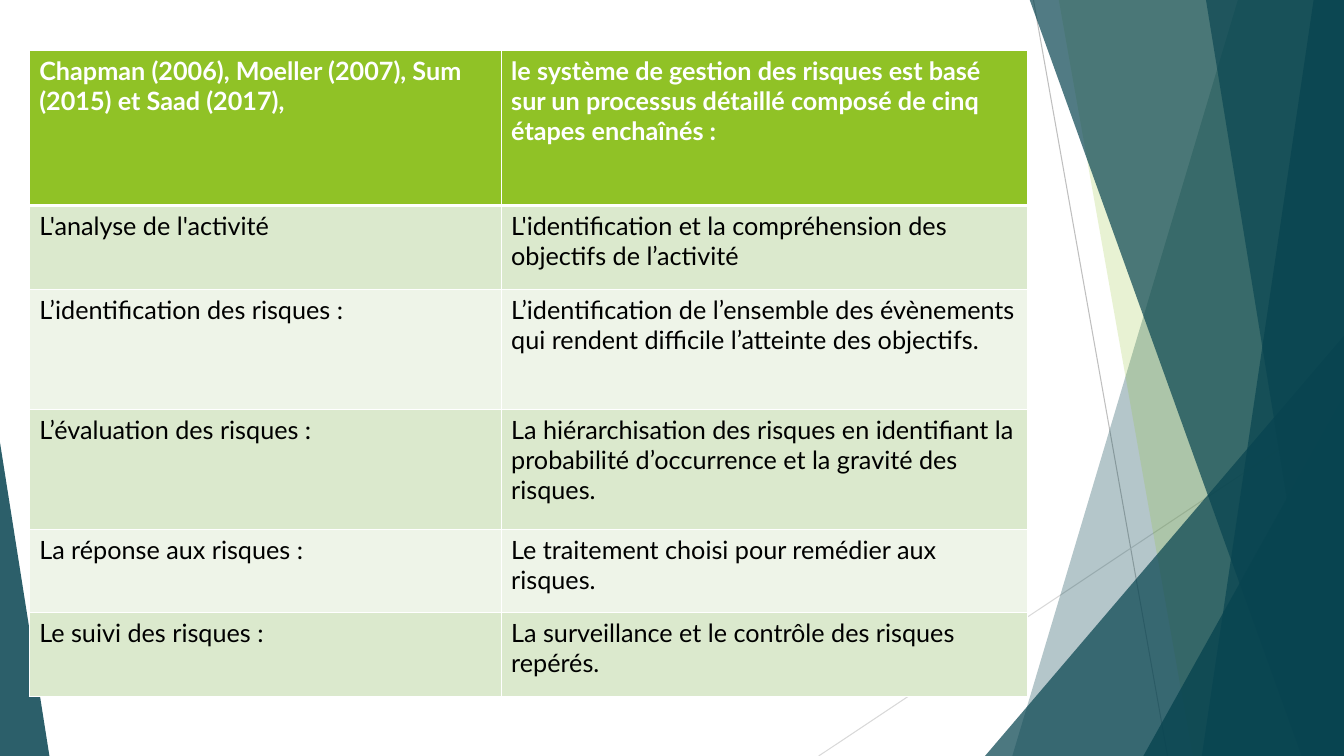
import pptx
import pptx.dml.color
import pptx.enum.shapes
import pptx.oxml
import pptx.oxml.ns
import pptx.util
from pptx.util import Inches

COLORS = {
    "white": "FFFFFF",
    "black": "000000",
    "teal": "084450",
    "green": "90C226",
    "light": "DBE9CD",
    "pale": "EEF4E8",
    "grey": "BFBFBF",
    "silver": "D9D9D9",
}
WIDTH, HEIGHT = 13.33, 7.5

ROWS = [
    ("Chapman (2006), Moeller (2007), Sum (2015) et Saad (2017),",
     "le système de gestion des risques est basé sur un processus détaillé composé de cinq étapes enchaînés :"),
    ("L'analyse de l'activité",
     "L'identification et la compréhension des objectifs de l’activité"),
    ("L’identification des risques :",
     "L’identification de l’ensemble des évènements qui rendent difficile l’atteinte des objectifs."),
    ("L’évaluation des risques :",
     "La hiérarchisation des risques en identifiant la probabilité d’occurrence et la gravité des risques."),
    ("La réponse aux risques :",
     "Le traitement choisi pour remédier aux risques."),
    ("Le suivi des risques :",
     "La surveillance et le contrôle des risques repérés."),
]
COL_WIDTHS = [4.68, 5.22]
ROW_HEIGHTS = [1.54, 0.83, 1.19, 1.19, 0.83, 0.83]


def rgb(name):
    return pptx.dml.color.RGBColor.from_string(COLORS[name])


def write(tf, text, font="Lato", size=18, color="black", bold=False):
    r = tf.paragraphs[0].add_run()
    r.text = text
    r.font.name = font
    r.font.size = pptx.util.Pt(size)
    r.font.bold = bold
    r.font.color.rgb = rgb(color)


class Deck:
    def __init__(self):
        self.prs = pptx.Presentation()
        self.prs.slide_width = Inches(WIDTH)
        self.prs.slide_height = Inches(HEIGHT)
        self.s = self.prs.slides.add_slide(self.prs.slide_layouts[6])

    def line(self, x1, y1, x2, y2, color):
        sp = self.s.shapes.add_connector(
            pptx.enum.shapes.MSO_CONNECTOR.STRAIGHT,
            Inches(x1), Inches(y1), Inches(x2), Inches(y2))
        sp.line.color.rgb = rgb(color)
        sp.line.width = pptx.util.Pt(0.75)
        pptx.oxml.ns.qn("a:effectLst")
        sp._element.spPr.append(pptx.oxml.parse_xml(
            f'<a:effectLst {pptx.oxml.ns.nsdecls("a")}/>'))

    def paint(self, sp, color, opacity):
        sp.shadow.inherit = False
        sp.fill.solid()
        sp.fill.fore_color.rgb = rgb(color)
        clr = sp._element.spPr.find(".//" + pptx.oxml.ns.qn("a:srgbClr"))
        clr.append(pptx.oxml.parse_xml(
            f'<a:alpha {pptx.oxml.ns.nsdecls("a")} val="{opacity * 1000}"/>'))
        sp.line.fill.background()

    def band(self, top, bottom, color, opacity):
        fb = self.s.shapes.build_freeform(Inches(top), Inches(-0.01))
        corners = [(WIDTH, -0.01), (WIDTH, HEIGHT), (bottom, HEIGHT)]
        fb.add_line_segments([(Inches(x), Inches(y)) for x, y in corners])
        self.paint(fb.convert_to_shape(), color, opacity)

    def triangle(self, x, y, w, apex, opacity):
        sp = self.s.shapes.add_shape(
            pptx.enum.shapes.MSO_SHAPE.ISOSCELES_TRIANGLE,
            Inches(x), Inches(y), Inches(w), Inches(HEIGHT - y))
        sp.adjustments[0] = apex
        self.paint(sp, "teal", opacity)

    def borders(self, cell, widths):
        tcPr = cell._tc.get_or_add_tcPr()
        for side, width in widths.items():
            tcPr.append(pptx.oxml.parse_xml(
                f'<a:ln{side} {pptx.oxml.ns.nsdecls("a")} w="{pptx.util.Pt(width)}">'
                f'<a:solidFill><a:srgbClr val="{COLORS["white"]}"/></a:solidFill></a:ln{side}>'))

    def table(self, x, y, rows, col_widths, row_heights):
        table = self.s.shapes.add_table(
            len(rows), len(col_widths), Inches(x), Inches(y),
            Inches(sum(col_widths)), Inches(sum(row_heights))).table
        for col, width in zip(table.columns, col_widths):
            col.width = Inches(width)
        for i, texts in enumerate(rows):
            table.rows[i].height = Inches(row_heights[i])
            head = i == 0
            fill = "green" if head else ("pale", "light")[i % 2]
            for j, text in enumerate(texts):
                cell = table.cell(i, j)
                self.borders(cell, {"L": 1, "R": 1, "T": 3 if i == 1 else 1, "B": 3 if head else 1})
                cell.fill.solid()
                cell.fill.fore_color.rgb = rgb(fill)
                write(cell.text_frame, text, color="white" if head else "black", bold=head)


def main():
    deck = Deck()
    deck.line(10.25, 0, 11.58, HEIGHT, "grey")
    deck.line(WIDTH, 4.03, 8.12, HEIGHT, "silver")
    deck.band(12.28, 10.04, "teal", 30)
    deck.band(10.5, 11.83, "green", 20)
    deck.triangle(9.77, 3.33, 3.56, 1, 72)
    deck.band(10.21, 12.91, "teal", 70)
    deck.band(13.03, 11.92, "teal", 70)
    deck.band(11.96, 13.18, "teal", 65)
    deck.triangle(11.34, 3.93, 1.99, 1, 80)
    deck.triangle(0, 4.39, 0.49, 0, 85)
    deck.table(0.29, 0.5, ROWS, COL_WIDTHS, ROW_HEIGHTS)
    deck.prs.save("out.pptx")


if __name__ == "__main__":
    main()
